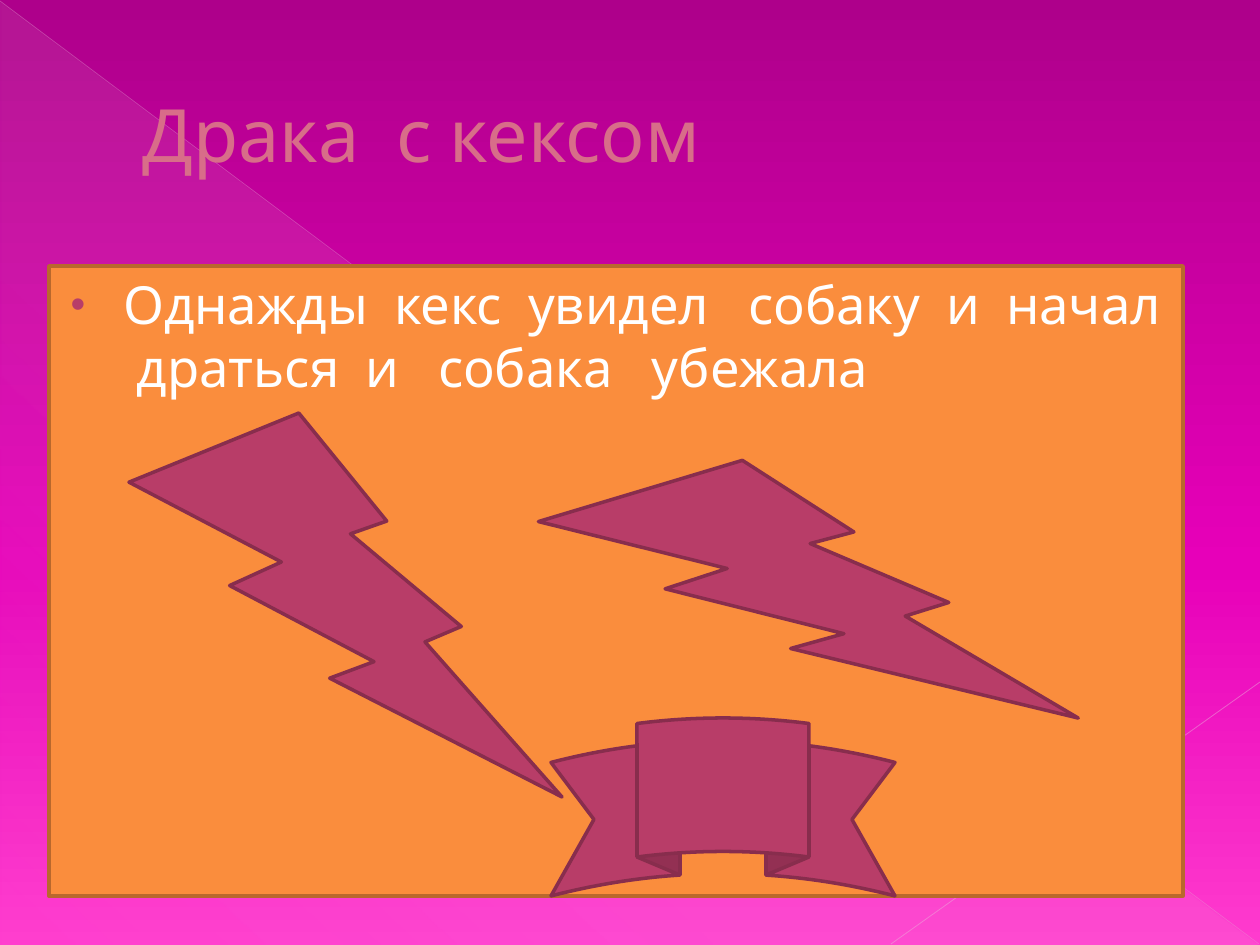
import pptx
import pptx.util
import pptx.dml.color
import pptx.enum.shapes
import pptx.enum.text
import pptx.oxml
import pptx.oxml.ns
from dataclasses import dataclass
from lxml import etree

Kind = pptx.enum.shapes.MSO_SHAPE
Pt = pptx.util.Pt
qn = pptx.oxml.ns.qn


@dataclass(frozen=True)
class Theme:
    font: str = "League Spartan"
    head: str = "D86D89"
    text: str = "FFFFFF"
    rose: str = "B83D68"
    wine: str = "882D4D"
    orange: str = "FA8D3D"
    brown: str = "B9682D"
    pale: str = "F4E7ED"
    rise: str = "E9A8D7"
    fall: str = "EBB2DB"
    back: tuple = ((0, "AE008B", 100), (60, "E700B9", 100), (100, "FF3BCE", 100))
    title: int = 42
    body: int = 30
    edge: int = 2


def px(n):
    return pptx.util.Emu(round(n * 914400 / 126))


def rgb(code):
    return pptx.dml.color.RGBColor.from_string(code)


def grad(stops, angle):
    """Gradient from (place, colour, opacity) stops, all in percent."""
    marks = "".join(
        f'<a:gs pos="{at * 1000}"><a:srgbClr val="{code}">'
        f'<a:alpha val="{alpha * 1000}"/></a:srgbClr></a:gs>'
        for at, code, alpha in stops)
    return pptx.oxml.parse_xml(
        f'<a:gradFill {pptx.oxml.ns.nsdecls("a")} rotWithShape="1">'
        f'<a:gsLst>{marks}</a:gsLst>'
        f'<a:lin ang="{angle * 60000}" scaled="0"/></a:gradFill>')


class Page:
    def __init__(self, deck, theme):
        self.theme = theme
        self.slide = deck.slides.add_slide(deck.slide_layouts[1])
        self.shapes = self.slide.shapes

    def blend(self, fill, root, stops, angle):
        fill.solid()
        old = next(root.iter(qn("a:solidFill")))
        old.getparent().replace(old, grad(stops, angle))

    def back(self):
        bg = self.slide.background
        self.blend(bg.fill, self.slide.element, self.theme.back, 90)

    def paint(self, shape, fill, line):
        shape.fill.solid()
        shape.fill.fore_color.rgb = rgb(fill)
        shape.line.color.rgb = rgb(line)
        shape.line.width = Pt(self.theme.edge)

    def shape(self, kind, x, y, w, h, turn=0):
        item = self.shapes.add_shape(kind, px(x), px(y), px(w), px(h))
        item.shadow.inherit = False
        item.rotation = turn
        self.paint(item, self.theme.rose, self.theme.wine)
        return item

    def veil(self, x, y, w, h, stops, angle):
        item = self.shape(Kind.RIGHT_TRIANGLE, x, y, w, h)
        item.line.fill.background()
        self.blend(item.fill, item.element.spPr, stops, angle)

    def line(self, x1, y1, x2, y2, code, width, alpha):
        item = self.shapes.add_connector(
            pptx.enum.shapes.MSO_CONNECTOR.STRAIGHT,
            px(x1), px(y1), px(x2), px(y2))
        item.line.color.rgb = rgb(code)
        item.line.width = Pt(width)
        props = item.element.spPr
        tint = next(props.iter(qn("a:srgbClr")))
        etree.SubElement(tint, qn("a:alpha"), val=str(alpha * 1000))
        etree.SubElement(props, qn("a:effectLst"))

    def text(self, item, box, words, size, code, left, hang, anchor):
        item.left, item.top, item.width, item.height = map(px, box)
        self.shapes.element.append(item.element)  # bring to the front
        frame = item.text_frame
        frame.text = words
        frame.word_wrap = True
        frame.auto_size = pptx.enum.text.MSO_AUTO_SIZE.NONE
        frame.vertical_anchor = anchor
        para = frame.paragraphs[0]
        para.alignment = pptx.enum.text.PP_ALIGN.LEFT
        props = para.runs[0].font
        props.name, props.size = self.theme.font, Pt(size)
        props.color.rgb = rgb(code)
        form = para.runs[0].font
        form.bold = False
        look = para._p.get_or_add_pPr()
        look.set("marL", str(px(left)))
        look.set("indent", str(px(hang)))
        return look

    def title(self, box, words):
        self.text(self.shapes.title, box, words, self.theme.title,
                  self.theme.head, 67, 0, pptx.enum.text.MSO_ANCHOR.MIDDLE)

    def body(self, box, words):
        item = self.slide.placeholders[1]
        look = self.text(item, box, words, self.theme.body, self.theme.text,
                         62, -53, pptx.enum.text.MSO_ANCHOR.TOP)
        self.paint(item, self.theme.orange, self.theme.brown)
        tint = etree.SubElement(look, qn("a:buClr"))
        etree.SubElement(tint, qn("a:srgbClr"), val=self.theme.rose)
        etree.SubElement(look, qn("a:buSzPct"), val="80000")
        etree.SubElement(look, qn("a:buFont"), typeface="Arial")
        etree.SubElement(look, qn("a:buChar"), char="•")


def main():
    deck = pptx.Presentation()
    deck.slide_width, deck.slide_height = px(1260), px(945)
    theme = Theme()
    page = Page(deck, theme)

    # Backdrop
    page.back()
    veil = [(0, theme.pale, 10), (70, theme.pale, 8), (100, theme.pale, 1)]
    page.veil(1, 2, 1258, 943, veil, 133)
    page.line(0, 1, 1259, 944, theme.rise, 0.39, 35)
    page.line(1260, 682, 891, 944, theme.fall, 0.47, 45)

    # Title and story
    page.title((63, 37, 1134, 193), "Драка  с кексом")
    page.body((49, 266, 1134, 630),
              "Однажды  кекс  увидел   собаку  и  начал  "
              "драться  и   собака   убежала")

    # Bolts and ribbon
    page.shape(Kind.LIGHTNING_BOLT, 543, 457, 528, 276, 356.8)
    page.shape(Kind.LIGHTNING_BOLT, 129, 413, 433, 384)
    page.shape(Kind.CURVED_UP_RIBBON, 551, 718, 344, 178)

    deck.save("out.pptx")


if __name__ == "__main__":
    main()
